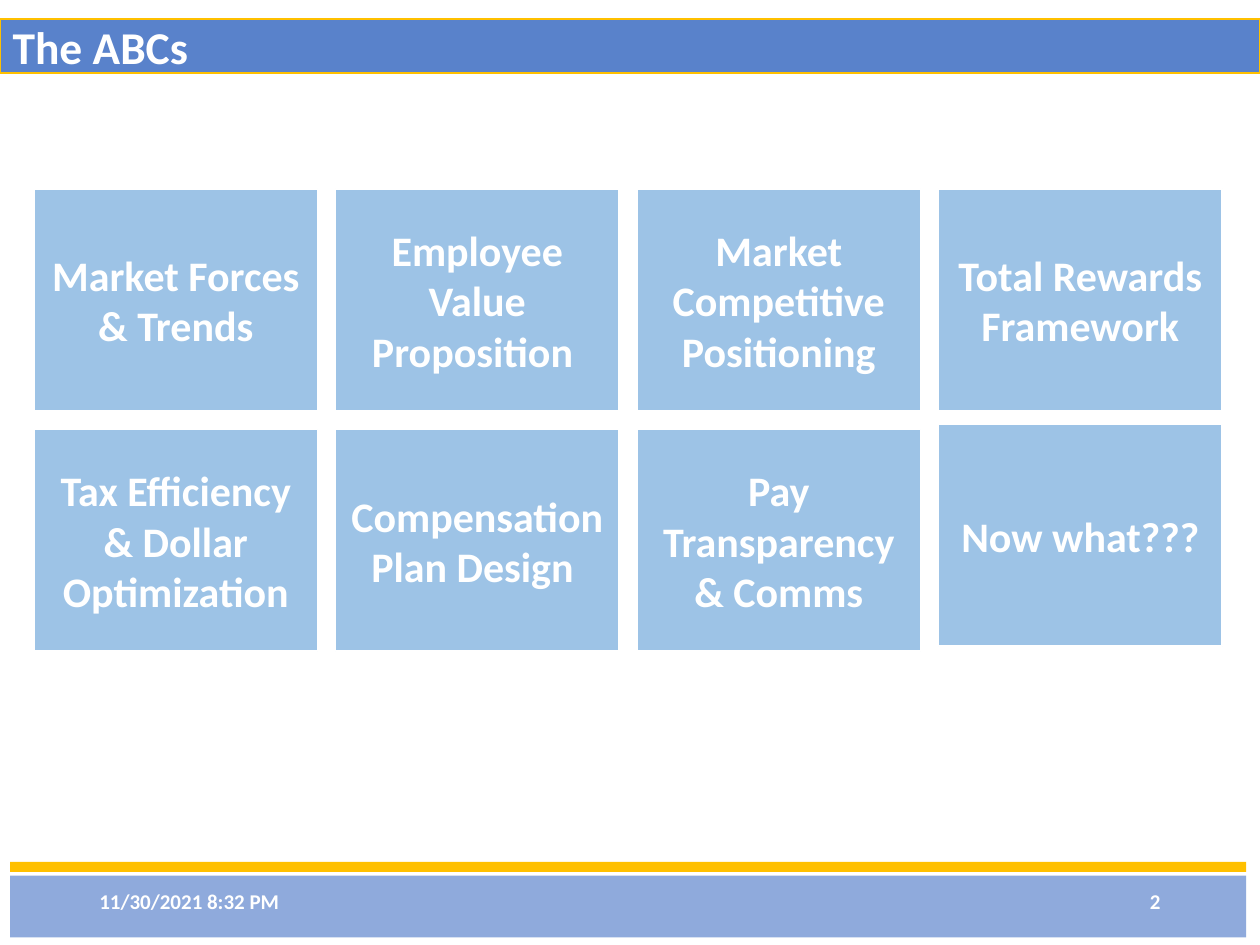
from pptx import Presentation
from pptx.dml.color import RGBColor
from pptx.enum.shapes import MSO_SHAPE
from pptx.enum.text import MSO_ANCHOR, MSO_AUTO_SIZE, PP_ALIGN
from pptx.util import Inches, Pt

WHITE = RGBColor(0xFF, 0xFF, 0xFF)
GOLD = RGBColor(0xFF, 0xC0, 0x00)
TITLE_BLUE = RGBColor(0x59, 0x82, 0xCB)
FOOTER_BLUE = RGBColor(0x8F, 0xAA, 0xDC)
TILE_BLUE = RGBColor(0x9D, 0xC3, 0xE6)
FONT = "Calibri"

TOPICS = [
    ["Market Forces & Trends", "Employee Value Proposition ",
     "Market Competitive Positioning", "Total Rewards Framework"],
    ["Tax Efficiency & Dollar Optimization", "Compensation Plan Design ",
     "Pay Transparency & Comms", "Now what???"],
]
GRID_LEFT, GRID_TOP = 0.27, 1.5
TILE_WIDTH, TILE_HEIGHT = 2.25, 1.76
COLUMN_PITCH, ROW_PITCH = 2.393, 1.91
LAST_TILE_LIFT = 0.04


def write(shape, text, size, align):
    """Put one bold white line of text in the vertical middle of a shape."""
    frame = shape.text_frame
    frame.word_wrap = True
    frame.auto_size = MSO_AUTO_SIZE.NONE
    frame.vertical_anchor = MSO_ANCHOR.MIDDLE
    paragraph = frame.paragraphs[0]
    paragraph.alignment = align
    run = paragraph.add_run()
    run.text = text
    run.font.name = FONT
    run.font.size = Pt(size)
    run.font.bold = True
    run.font.color.rgb = WHITE


def paint(shape, fill, line=None, line_width=1):
    shape.fill.solid()
    shape.fill.fore_color.rgb = fill
    if line is None:
        shape.line.fill.background()
    else:
        shape.line.color.rgb = line
        shape.line.width = Pt(line_width)


def add_rectangle(slide, left, top, width, height, fill, line=None):
    shape = slide.shapes.add_shape(
        MSO_SHAPE.RECTANGLE, Inches(left), Inches(top), Inches(width), Inches(height))
    shape.shadow.inherit = False
    paint(shape, fill, line)
    return shape


def add_title(slide, text):
    title = slide.shapes.title
    title.left, title.top = Inches(0), Inches(0.15)
    title.width, title.height = Inches(10), Inches(0.43)
    paint(title, TITLE_BLUE, GOLD, 1.5)
    write(title, text, 26, PP_ALIGN.LEFT)


def add_footer_text(slide, left, text, align):
    box = slide.shapes.add_textbox(
        Inches(left), Inches(6.95), Inches(2.25), Inches(0.4))
    write(box, text, 12, align)


def add_footer(slide):
    add_rectangle(slide, 0.08, 6.95, 9.81, 0.49, FOOTER_BLUE)
    add_rectangle(slide, 0.08, 6.84, 9.81, 0.08, GOLD)
    add_footer_text(slide, 0.69, "11/30/2021 8:32 PM", PP_ALIGN.LEFT)
    add_footer_text(slide, 7.06, "2", PP_ALIGN.RIGHT)


def add_topic_tiles(slide):
    for row, topics in enumerate(TOPICS):
        for column, topic in enumerate(topics):
            is_last = topic == TOPICS[-1][-1]
            left = GRID_LEFT + column * COLUMN_PITCH
            top = GRID_TOP + row * ROW_PITCH - (LAST_TILE_LIFT if is_last else 0)
            tile = add_rectangle(
                slide, left, top, TILE_WIDTH, TILE_HEIGHT, TILE_BLUE, WHITE)
            write(tile, topic, 24, PP_ALIGN.CENTER)


def main():
    presentation = Presentation()
    presentation.slide_width = Inches(10)
    presentation.slide_height = Inches(7.5)
    slide = presentation.slides.add_slide(presentation.slide_layouts[5])
    add_title(slide, "The ABCs")
    add_footer(slide)
    add_topic_tiles(slide)
    presentation.save("out.pptx")


if __name__ == "__main__":
    main()
